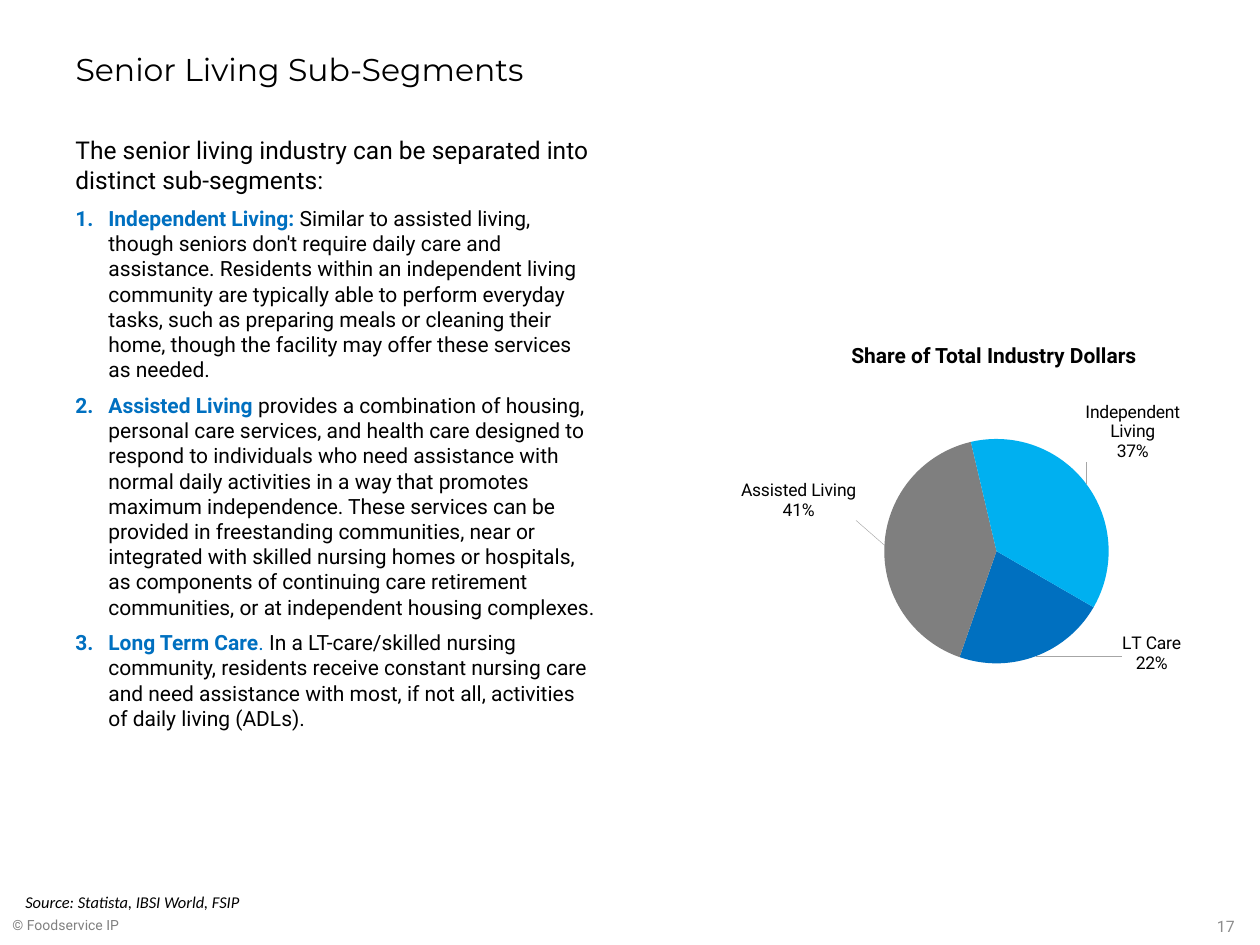
from dataclasses import dataclass

from lxml import etree
from pptx import Presentation
from pptx.chart.data import CategoryChartData
from pptx.dml.color import RGBColor
from pptx.enum.chart import XL_CHART_TYPE
from pptx.enum.text import MSO_ANCHOR, PP_ALIGN
from pptx.oxml import parse_xml
from pptx.oxml.ns import nsdecls, qn
from pptx.util import Emu, Pt

PIE = XL_CHART_TYPE.PIE
TOP, MIDDLE, BOTTOM = MSO_ANCHOR.TOP, MSO_ANCHOR.MIDDLE, MSO_ANCHOR.BOTTOM
LEFT, RIGHT = PP_ALIGN.LEFT, PP_ALIGN.RIGHT
PX_PER_INCH = 126
BODY_FONT = "Roboto"
BLACK, BLUE = "000000", "0070C0"
NUMBER_INDENT = 33


@dataclass(frozen=True)
class Box:
    left: int
    top: int
    width: int
    height: int


@dataclass(frozen=True)
class Style:
    size: float
    color: str = BLACK
    font: str = BODY_FONT
    bold: bool = False
    italic: bool = False


@dataclass(frozen=True)
class SubSegment:
    """A numbered item: bold lead, blue punctuation after it, then the text."""
    lead: str
    mark: str
    description: str


@dataclass(frozen=True)
class Slice:
    """A pie slice and the shift of its label, in fractions of the chart."""
    name: str
    share: int
    color: str
    label_dx: float
    label_dy: float


SUB_SEGMENTS = [
    SubSegment("Independent Living: ", "",
               "Similar to assisted living, though seniors don't require daily care and "
               "assistance. Residents within an independent living community are typically "
               "able to perform everyday tasks, such as preparing meals or cleaning their "
               "home, though the facility may offer these services as needed."),
    SubSegment("Assisted Living ", "",
               "provides a combination of housing, personal care services, and health care "
               "designed to respond to individuals who need assistance with normal daily "
               "activities in a way that promotes maximum independence. These services can be "
               "provided in freestanding communities, near or integrated with skilled nursing "
               "homes or hospitals, as components of continuing care retirement communities, "
               "or at independent housing complexes."),
    SubSegment("Long Term Care", ". ",
               "In a LT-care/skilled nursing community, residents receive constant nursing "
               "care and need assistance with most, if not all, activities of daily living "
               "(ADLs)."),
]
SLICES = [
    Slice("LT Care", 22, BLUE, 0.12, -0.08),
    Slice("Assisted Living", 41, "7F7F7F", -0.03, -0.12),
    Slice("Independent Living", 37, "00B0F0", -0.01, -0.05),
]


def px(length: int) -> Emu:
    return Emu(round(length * 914400 / PX_PER_INCH))


def rgb(value: str) -> RGBColor:
    return RGBColor.from_string(value)


def place(shape, box: Box) -> None:
    shape.left, shape.top = px(box.left), px(box.top)
    shape.width, shape.height = px(box.width), px(box.height)


def set_font(font, style: Style) -> None:
    font.name, font.size = style.font, Pt(style.size)
    font.bold, font.italic = style.bold, style.italic
    font.color.rgb = rgb(style.color)


def write(shape, text: str, style: Style, anchor=TOP, align=LEFT, wrap=True):
    frame = shape.text_frame
    frame.word_wrap, frame.vertical_anchor = wrap, anchor
    paragraph = frame.paragraphs[0]
    paragraph.text, paragraph.alignment = text, align
    set_font(paragraph.font, style)
    return frame


def add_text(slide, box: Box, text: str, style: Style, **layout):
    shape = slide.shapes.add_textbox(*map(px, (box.left, box.top, box.width, box.height)))
    return write(shape, text, style, **layout)


def add_sub_segment(frame, segment: SubSegment) -> None:
    paragraph = frame.add_paragraph()
    properties = paragraph._p.get_or_add_pPr()
    properties.set("marL", str(px(NUMBER_INDENT)))
    properties.set("indent", str(-px(NUMBER_INDENT)))
    etree.SubElement(properties, qn("a:buFont"), typeface="+mj-lt")
    etree.SubElement(properties, qn("a:buAutoNum"), type="arabicPeriod")
    paragraph.space_before, paragraph.space_after = Pt(2.4), Pt(3.6)
    parts = [(segment.lead, Style(12, BLUE, bold=True)),
             (segment.mark, Style(12, BLUE)),
             (segment.description, Style(12))]
    for text, style in parts:
        if text:
            run = paragraph.add_run()
            run.text = text
            set_font(run.font, style)


def manual_layout(inner: str, **fractions: float) -> str:
    sizes = "".join(f'<c:{key} val="{value}"/>' for key, value in fractions.items())
    return f"<c:layout><c:manualLayout>{inner}{sizes}</c:manualLayout></c:layout>"


def pie_labels():
    shown = ('<c:dLblPos val="outEnd"/><c:showLegendKey val="0"/><c:showVal val="0"/>'
             '<c:showCatName val="1"/><c:showSerName val="0"/><c:showPercent val="1"/>'
             '<c:showBubbleSize val="0"/><c:separator>\n</c:separator>')
    text = ('<c:numFmt formatCode="0%" sourceLinked="0"/><c:spPr><a:noFill/></c:spPr>'
            '<c:txPr><a:bodyPr/><a:p><a:pPr><a:defRPr sz="1000" b="0"><a:solidFill>'
            f'<a:srgbClr val="{BLACK}"/></a:solidFill><a:latin typeface="{BODY_FONT}"/>'
            '</a:defRPr></a:pPr><a:endParaRPr lang="en-US"/></a:p></c:txPr>')
    labels = "".join(
        f'<c:dLbl><c:idx val="{index}"/>'
        f'{manual_layout("", x=part.label_dx, y=part.label_dy)}{text}{shown}</c:dLbl>'
        for index, part in enumerate(SLICES))
    leaders = ('<c:showLeaderLines val="1"/><c:leaderLines><c:spPr><a:ln w="3175"><a:solidFill>'
               '<a:srgbClr val="A6A6A6"/></a:solidFill></a:ln></c:spPr></c:leaderLines>')
    return parse_xml(f'<c:dLbls {nsdecls("c", "a")}>{labels}{text}{shown}{leaders}</c:dLbls>')


def add_share_pie(slide, box: Box) -> None:
    data = CategoryChartData(number_format="0")
    data.categories = [part.name for part in SLICES]
    data.add_series("Series 1", [part.share for part in SLICES])
    bounds = map(px, (box.left, box.top, box.width, box.height))
    chart = slide.shapes.add_chart(PIE, *bounds, data).chart
    chart.has_legend = chart.has_title = False
    set_font(chart.font, Style(10))
    plot = chart.plots[0]
    plot.vary_by_categories = True
    series = plot.series[0]
    for index, part in enumerate(SLICES):
        fill = series.points[index].format.fill
        fill.solid()
        fill.fore_color.rgb = rgb(part.color)
    series._element.find(qn("c:cat")).addprevious(pie_labels())

    pie = series._element.getparent()
    for old in pie.findall(qn("c:firstSliceAng")):
        pie.remove(old)
    etree.SubElement(pie, qn("c:firstSliceAng"), val="120")
    area = pie.getparent()
    for old in area.findall(qn("c:layout")):
        area.remove(old)
    inner = ('<c:layoutTarget val="inner"/><c:xMode val="edge"/><c:yMode val="edge"/>')
    layout = manual_layout(inner, x=0.25, y=0.28, w=0.5, h=0.61)
    area.insert(0, parse_xml(layout.replace("<c:layout>", f'<c:layout {nsdecls("c")}>', 1)))


def main() -> None:
    presentation = Presentation()
    presentation.slide_width, presentation.slide_height = px(1260), px(945)
    slide = presentation.slides.add_slide(presentation.slide_layouts[5])

    title = slide.shapes.title
    place(title, Box(63, 38, 1134, 62))
    write(title, "Senior Living Sub-Segments", Style(18, font="Montserrat"), anchor=MIDDLE)

    body = add_text(slide, Box(63, 129, 547, 750),
                    "The senior living industry can be separated into distinct sub-segments:",
                    Style(14))
    body.paragraphs[0].space_after = Pt(4.2)
    for segment in SUB_SEGMENTS:
        add_sub_segment(body, segment)

    add_share_pie(slide, Box(646, 336, 701, 368))
    add_text(slide, Box(839, 336, 315, 38), "Share of Total Industry Dollars",
             Style(12, bold=True), wrap=False)
    add_text(slide, Box(13, 885, 759, 33), "Source: Statista, IBSI World, FSIP",
             Style(9.4, font="Calibri", italic=True), anchor=BOTTOM)
    add_text(slide, Box(0, 891, 290, 49), "© Foodservice IP", Style(8, "808080"), anchor=BOTTOM)
    add_text(slide, Box(903, 901, 344, 50), "17", Style(9, "8C8C8C"),
             anchor=MIDDLE, align=RIGHT)
    presentation.save("out.pptx")


if __name__ == "__main__":
    main()
